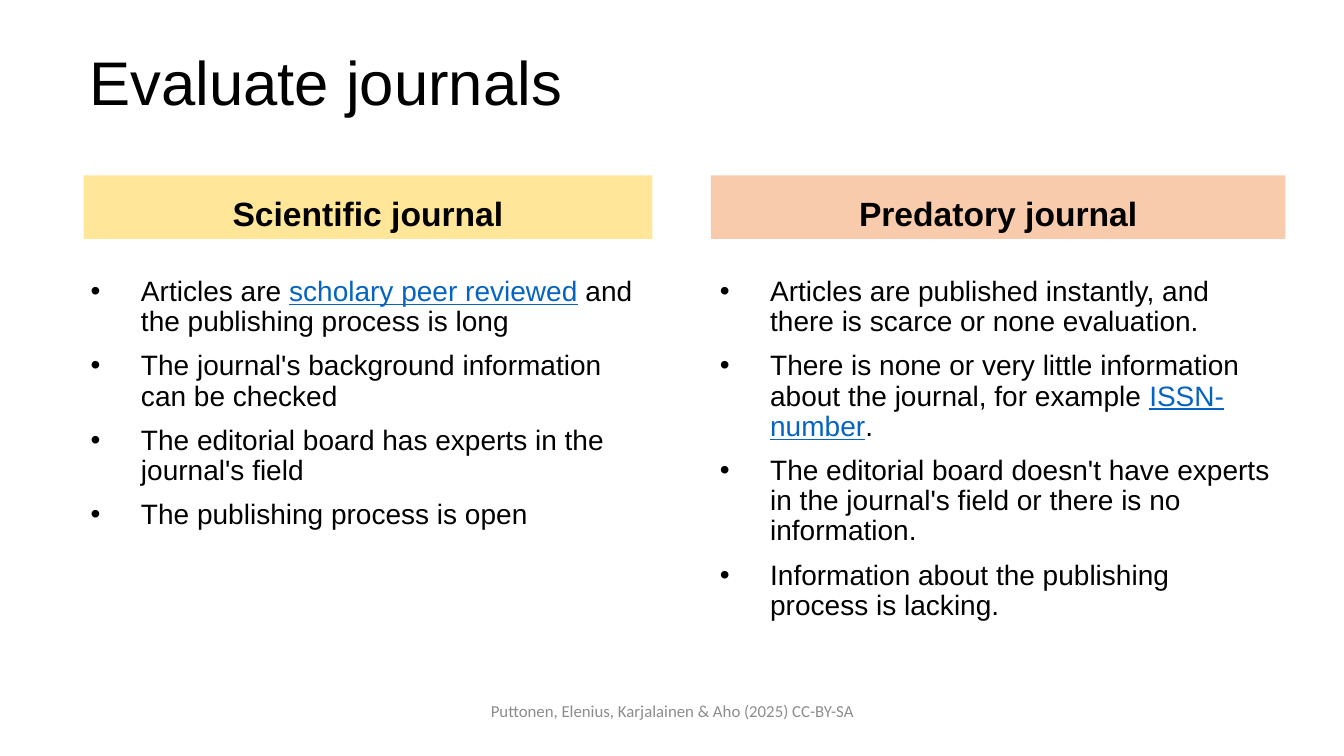
import pptx
import pptx.util
import pptx.dml.color
import pptx.enum.shapes
import pptx.enum.text
from lxml import etree

Inches = pptx.util.Inches
RGBColor = pptx.dml.color.RGBColor
Align = pptx.enum.text.PP_ALIGN
Anchor = pptx.enum.text.MSO_ANCHOR

BLACK = RGBColor(0x00, 0x00, 0x00)
GRAY = RGBColor(0x8C, 0x8C, 0x8C)
BLUE = RGBColor(0x05, 0x63, 0xC1)
YELLOW = RGBColor(0xFF, 0xE6, 0x99)
PEACH = RGBColor(0xF8, 0xCB, 0xAD)

GOOD = [
    ("Articles are ", "scholary peer reviewed", " and the publishing process is long"),
    ("The journal's background information can be checked",),
    ("The editorial board has experts in the journal's field",),
    ("The publishing process is open",),
]
BAD = [
    ("Articles are published instantly, and there is scarce or none evaluation.",),
    ("There is none or very little information about the journal, for example ",
     "ISSN-number", "."),
    ("The editorial board doesn't have experts in the journal's field or there is no information.",),
    ("Information about the publishing process is lacking.",),
]


class Page:
    font = "Arial"
    space = 0.9
    gap = pptx.util.Pt(10)
    indent = Inches(0.5)

    def __init__(self, slide):
        self.slide = slide

    def style(self, run, size, color=BLACK, bold=False, font=None):
        run.font.name = font or self.font
        run.font.size = pptx.util.Pt(size)
        run.font.bold = bold
        run.font.color.rgb = color

    def box(self, area):
        frame = self.slide.shapes.add_textbox(*map(Inches, area)).text_frame
        frame.word_wrap = True
        return frame

    def title(self, text, area):
        frame = self.box(area)
        frame.vertical_anchor = Anchor.MIDDLE
        frame.text = text
        para = frame.paragraphs[0]
        para.line_spacing = self.space
        self.style(para.runs[0], 44)

    def header(self, text, area, fill):
        kind = pptx.enum.shapes.MSO_SHAPE.RECTANGLE
        shape = self.slide.shapes.add_shape(kind, *map(Inches, area))
        shape.shadow.inherit = False
        shape.fill.solid()
        shape.fill.fore_color.rgb = fill
        shape.line.fill.background()
        frame = shape.text_frame
        frame.word_wrap = True
        frame.vertical_anchor = Anchor.BOTTOM
        frame.text = text
        para = frame.paragraphs[0]
        para.alignment = Align.CENTER
        para.line_spacing = self.space
        para.space_before = self.gap
        self.style(para.runs[0], 24, bold=True)

    def bullets(self, items, area):
        frame = self.box(area)
        for index, parts in enumerate(items):
            para = frame.add_paragraph() if index else frame.paragraphs[0]
            para.line_spacing = self.space
            para.space_before = self.gap
            props = para._p.get_or_add_pPr()
            props.set("marL", str(self.indent))
            props.set("indent", str(-self.indent))
            space = pptx.oxml.ns.qn
            etree.SubElement(props, space("a:buFont")).set("typeface", self.font)
            etree.SubElement(props, space("a:buChar")).set("char", "•")
            for place, text in enumerate(parts):
                run = para.add_run()
                run.text = text
                linked = place == 1
                self.style(run, 20, BLUE if linked else BLACK)
                run.font.underline = linked

    def footer(self, text, area):
        frame = self.box(area)
        frame.margin_top = 0
        frame.text = text
        para = frame.paragraphs[0]
        para.alignment = Align.CENTER
        self.style(para.runs[0], 12, GRAY, font="Calibri")


def main():
    deck = pptx.Presentation()
    deck.slide_width = Inches(13.33)
    deck.slide_height = Inches(7.5)
    page = Page(deck.slides.add_slide(deck.slide_layouts[6]))
    page.title("Evaluate journals", (0.79, 0.44, 11.74, 0.82))
    page.header("Scientific journal", (0.83, 1.74, 5.64, 0.63), YELLOW)
    page.bullets(GOOD, (0.8, 2.7, 5.69, 2.62))
    page.header("Predatory journal", (7.05, 1.74, 5.7, 0.63), PEACH)
    page.bullets(BAD, (7.04, 2.7, 5.69, 3.53))
    page.footer("Puttonen, Elenius, Karjalainen & Aho (2025) CC-BY-SA",
                (4.42, 6.95, 4.5, 0.4))
    deck.save("out.pptx")


if __name__ == "__main__":
    main()
